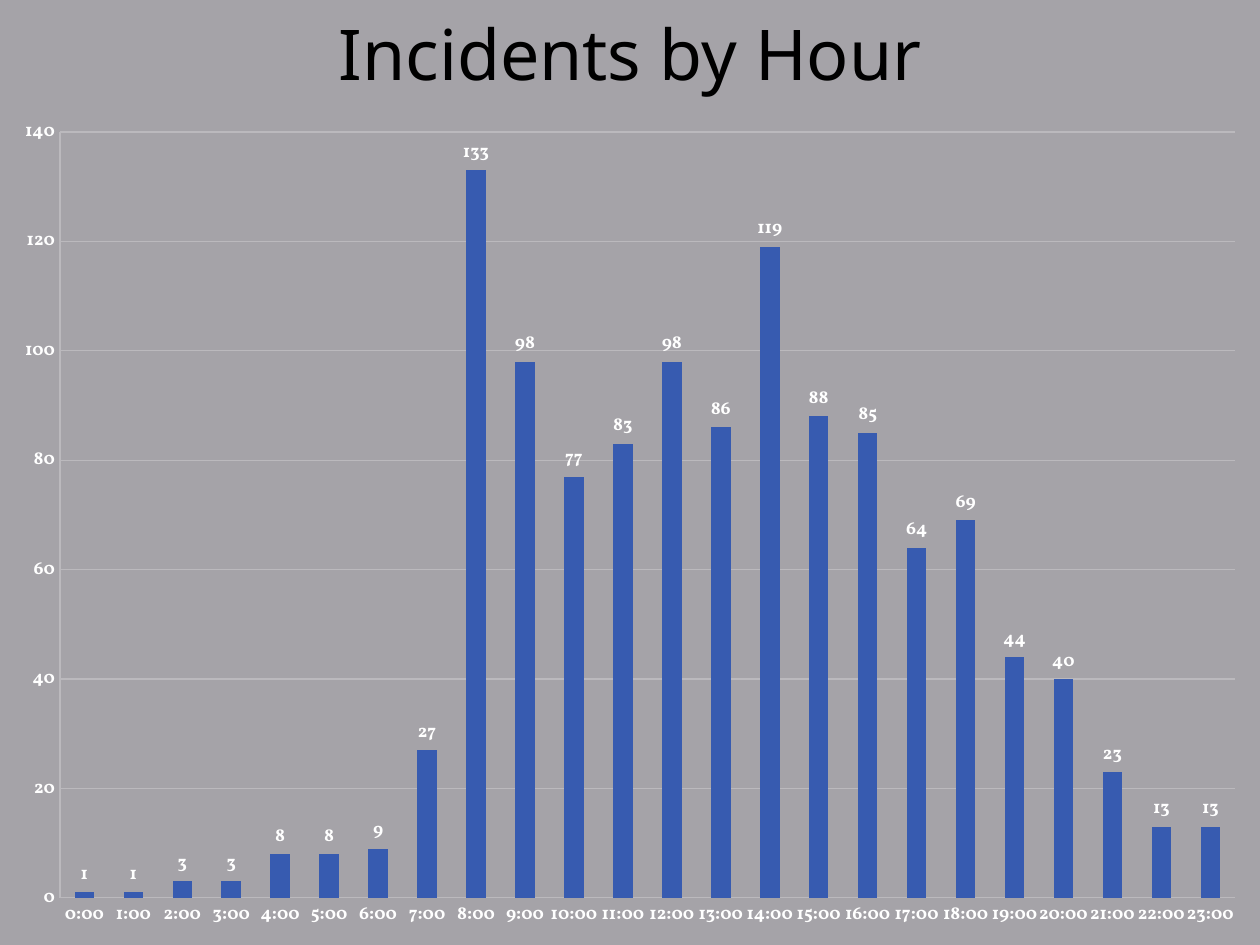
"""Build the Incidents by Hour slide with its hourly column chart."""
from dataclasses import dataclass
from typing import NamedTuple

import lxml.etree
import pptx
import pptx.chart.data
import pptx.dml.color
import pptx.enum.chart
import pptx.enum.text
import pptx.oxml.ns
import pptx.util

EMU_PER_PX = 914400 / 126


@dataclass(frozen=True)
class Theme:
    background: str = "A5A3A8"
    title: str = "000000"
    bar: str = "375BB0"
    label: str = "FFFFFF"
    grid: str = "BBB9BD"
    title_font: str = "Noto Sans"
    chart_font: str = "Vollkorn"
    title_size: float = 40
    chart_size: float = 10.5
    grid_width: float = 0.75


class Box(NamedTuple):
    x: int
    y: int
    w: int
    h: int


class HourCount(NamedTuple):
    hour: int
    count: int


THEME = Theme()
SLIDE = Box(0, 0, 1260, 945)
TITLE = Box(0, 0, 1260, 105)
CHART = Box(0, 103, 1260, 842)
PLOT = Box(60, 132, 1175, 766)
COUNTS = [1, 1, 3, 3, 8, 8, 9, 27, 133, 98, 77, 83,
          98, 86, 119, 88, 85, 64, 69, 44, 40, 23, 13, 13]
INCIDENTS = [HourCount(hour, count) for hour, count in enumerate(COUNTS)]


def px(value: int) -> pptx.util.Emu:
    return pptx.util.Emu(round(value * EMU_PER_PX))


def rgb(value: str) -> pptx.dml.color.RGBColor:
    return pptx.dml.color.RGBColor.from_string(value)


def style_font(font, name: str, size: float, color: str, bold: bool) -> None:
    font.name = name
    font.size = pptx.util.Pt(size)
    font.bold = bold
    font.color.rgb = rgb(color)


def style_line(line) -> None:
    line.color.rgb = rgb(THEME.grid)
    line.width = pptx.util.Pt(THEME.grid_width)


def add_title(s, box: Box, text: str) -> None:
    sp = s.shapes.add_textbox(*map(px, box))
    tf = sp.text_frame
    tf.word_wrap = True
    tf.vertical_anchor = pptx.enum.text.MSO_ANCHOR.MIDDLE
    p = tf.paragraphs[0]
    p.alignment = pptx.enum.text.PP_ALIGN.CENTER
    r = p.add_run()
    r.text = text
    style_font(r.font, THEME.title_font, THEME.title_size, THEME.title, False)


def place_plot(chart, frame: Box, plot: Box) -> None:
    qn = pptx.oxml.ns.qn
    area = chart.element.find(".//" + qn("c:plotArea"))
    for old in area.findall(qn("c:layout")):
        area.remove(old)
    layout = lxml.etree.Element(qn("c:layout"))
    manual = lxml.etree.SubElement(layout, qn("c:manualLayout"))
    settings = {
        "layoutTarget": "inner", "xMode": "edge", "yMode": "edge",
        "x": round((plot.x - frame.x) / frame.w, 4),
        "y": round((plot.y - frame.y) / frame.h, 4),
        "w": round(plot.w / frame.w, 4),
        "h": round(plot.h / frame.h, 4),
    }
    for tag, value in settings.items():
        lxml.etree.SubElement(manual, qn(f"c:{tag}")).set("val", str(value))
    area.insert(0, layout)


def add_chart(s, box: Box, plot_box: Box, incidents: list[HourCount]) -> None:
    data = pptx.chart.data.CategoryChartData()
    data.categories = [f"{item.hour}:00" for item in incidents]
    data.add_series("Series 1", [item.count for item in incidents])
    kind = pptx.enum.chart.XL_CHART_TYPE.COLUMN_CLUSTERED
    chart = s.shapes.add_chart(kind, *map(px, box), data).chart
    chart.has_title = False
    chart.has_legend = False
    style_font(chart.font, THEME.chart_font, THEME.chart_size, THEME.label, True)

    for axis in (chart.category_axis, chart.value_axis):
        axis.major_tick_mark = pptx.enum.chart.XL_TICK_MARK.NONE
        axis.minor_tick_mark = pptx.enum.chart.XL_TICK_MARK.NONE
        style_line(axis.format.line)
    chart.category_axis.tick_labels.offset = 0
    chart.value_axis.minimum_scale = 0
    chart.value_axis.maximum_scale = 140
    chart.value_axis.major_unit = 20
    chart.value_axis.has_major_gridlines = True
    style_line(chart.value_axis.major_gridlines.format.line)

    plot = chart.plots[0]
    plot.gap_width = 150
    plot.vary_by_categories = False
    fill = plot.series[0].format.fill
    fill.solid()
    fill.fore_color.rgb = rgb(THEME.bar)
    plot.has_data_labels = True
    labels = plot.data_labels
    labels.show_value = True
    labels.position = pptx.enum.chart.XL_LABEL_POSITION.OUTSIDE_END
    style_font(labels.font, THEME.chart_font, THEME.chart_size, THEME.label, True)
    place_plot(chart, box, plot_box)


def main() -> None:
    prs = pptx.Presentation()
    prs.slide_width, prs.slide_height = px(SLIDE.w), px(SLIDE.h)
    s = prs.slides.add_slide(prs.slide_layouts[6])
    s.background.fill.solid()
    s.background.fill.fore_color.rgb = rgb(THEME.background)
    add_title(s, TITLE, "Incidents by Hour")
    add_chart(s, CHART, PLOT, INCIDENTS)
    prs.save("out.pptx")


if __name__ == "__main__":
    main()
